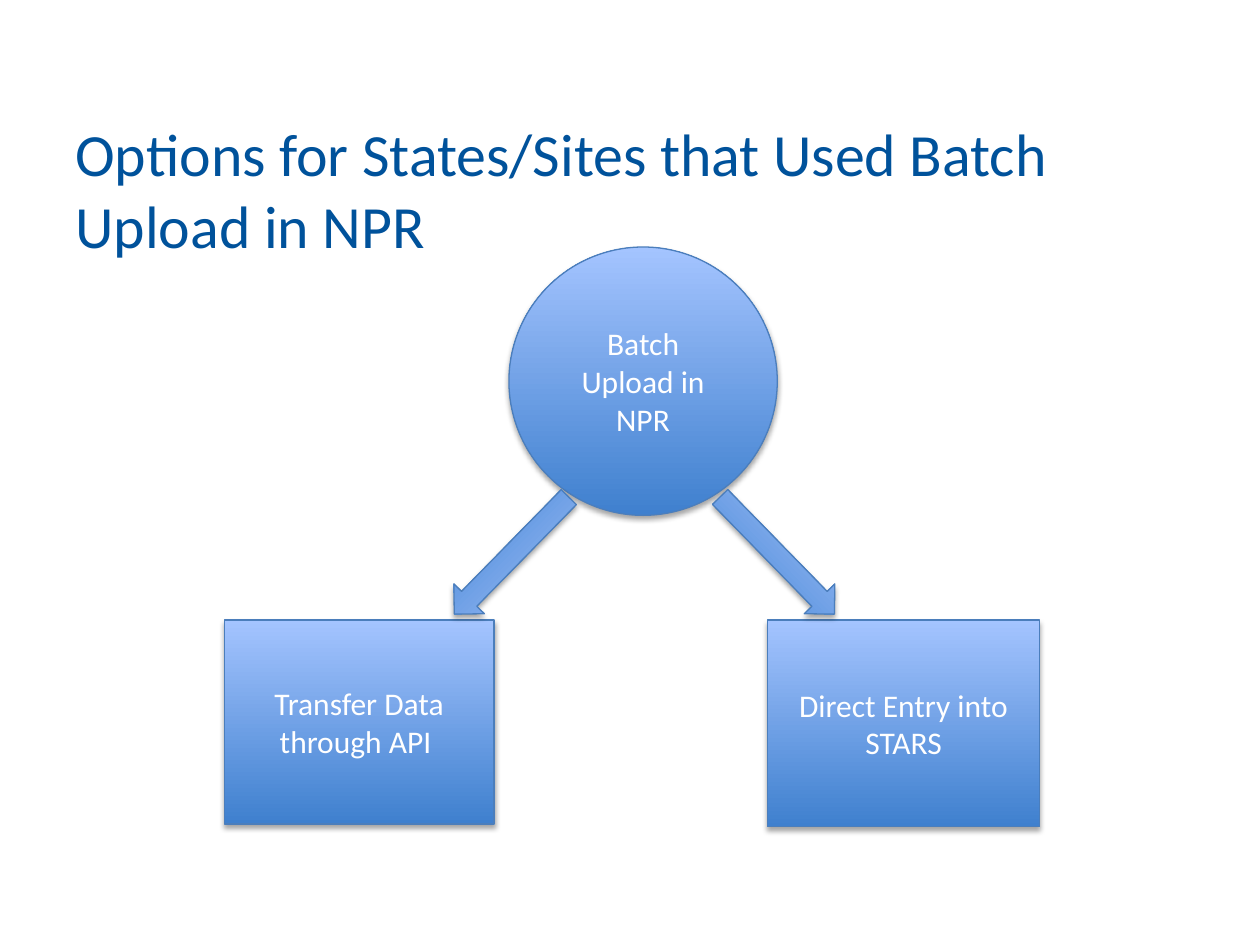
from lxml.etree import SubElement
from pptx import Presentation
from pptx.dml.color import RGBColor
from pptx.enum.shapes import MSO_SHAPE
from pptx.enum.text import MSO_ANCHOR, PP_ALIGN
from pptx.oxml.ns import qn
from pptx.util import Cm, Pt


def tint(color, code):
    color.rgb = RGBColor.from_string(code)


def write(shape, text, size, code, align):
    frame = shape.text_frame
    frame.word_wrap = True
    frame.vertical_anchor = MSO_ANCHOR.MIDDLE
    para = frame.paragraphs[0]
    para.alignment = align
    run = para.add_run()
    run.text = text
    run.font.name = "Calibri"
    run.font.size = Pt(size)
    tint(run.font.color, code)


deck = Presentation()
deck.slide_width = Cm(25.4)
deck.slide_height = Cm(19.05)
slide = deck.slides.add_slide(deck.slide_layouts[6])

title = slide.shapes.add_textbox(Cm(1.27), Cm(2.95), Cm(22.86), Cm(1.7))
write(title, "Options for States/Sites that Used Batch Upload in NPR",
      34.2, "00529B", PP_ALIGN.LEFT)

items = [
    (MSO_SHAPE.OVAL, 10.26, 4.98, 5.41, 5.41, 0, "Batch Upload in NPR"),
    (MSO_SHAPE.RECTANGLE, 4.52, 12.5, 5.44, 4.11, 0, "Transfer Data through API "),
    (MSO_SHAPE.RECTANGLE, 15.47, 12.5, 5.49, 4.17, 0, "Direct Entry into STARS"),
    (MSO_SHAPE.RIGHT_ARROW, 14.02, 10.77, 3.3, 0.86, 45.7, ""),
    (MSO_SHAPE.RIGHT_ARROW, 8.66, 10.77, 3.3, 0.86, 134.4, ""),
]

for kind, left, top, width, height, turn, text in items:
    shape = slide.shapes.add_shape(kind, Cm(left), Cm(top), Cm(width), Cm(height))
    shape.rotation = turn
    shape.fill.gradient()
    shape.fill.gradient_angle = 90
    for stop, place, code in zip(shape.fill.gradient_stops, (0, 1), ("3F80CE", "A4C4FF")):
        stop.position = place
        tint(stop.color, code)
    tint(shape.line.color, "4B7EBC")
    shape.line.width = Pt(0.75)
    shape.shadow.inherit = False
    glow = SubElement(shape.element.spPr.find(qn("a:effectLst")), qn("a:outerShdw"),
                      blurRad=str(Pt(3.1)), dist=str(Pt(1.8)), dir="5400000", rotWithShape="0")
    shade = SubElement(glow, qn("a:srgbClr"), val="000000")
    SubElement(shade, qn("a:alpha"), val="35000")
    if text:
        write(shape, text, 18, "FFFFFF", PP_ALIGN.CENTER)

deck.save("out.pptx")
